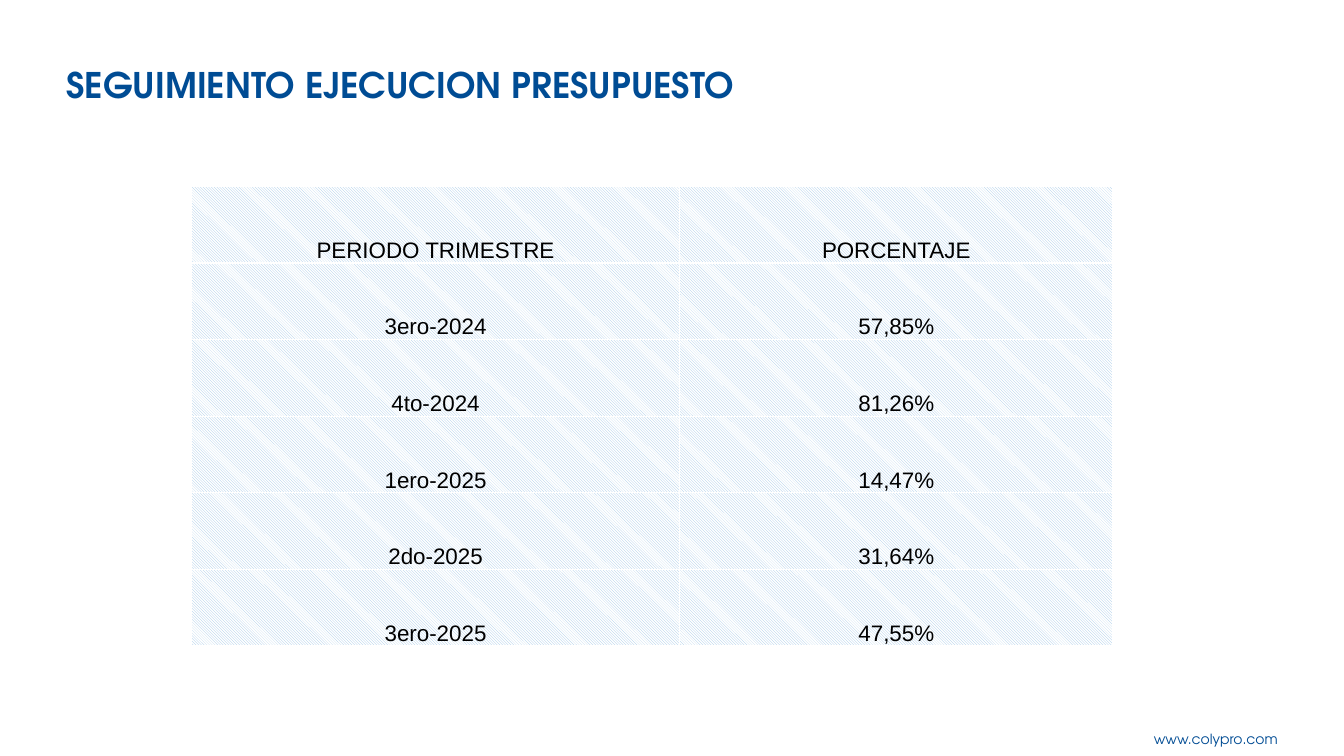
from dataclasses import dataclass

import pptx
import pptx.dml.color
import pptx.enum.dml
import pptx.enum.text
import pptx.oxml
import pptx.oxml.ns
import pptx.util

Inches = pptx.util.Inches
Pt = pptx.util.Pt
ALIGN = pptx.enum.text.PP_ALIGN
ANCHOR = pptx.enum.text.MSO_ANCHOR

BLUE = "004C94"
BLACK = "000000"
WHITE = "FFFFFF"
STRIPE = "9DC3E6"
BRAND_FONT = "TeX Gyre Adventor"
COL_WIDTHS = (4.84, 4.3)
ROW_HEIGHT = 0.76


@dataclass
class Row:
    period: str
    share: str


ROWS = [
    Row("PERIODO TRIMESTRE", "PORCENTAJE"),
    Row("3ero-2024", "57,85%"),
    Row("4to-2024", "81,26%"),
    Row("1ero-2025", "14,47%"),
    Row("2do-2025", "31,64%"),
    Row("3ero-2025", "47,55%"),
]

TITLE_FONT = {"name": BRAND_FONT, "size": Pt(25.2), "bold": True}
FOOTER_FONT = {"name": BRAND_FONT, "size": Pt(10)}
CELL_FONT = {"name": "Arial", "size": Pt(16), "bold": False}
CELL_FORMAT = {
    "margin_left": 0,
    "margin_right": 0,
    "margin_top": 0,
    "margin_bottom": 0,
    "vertical_anchor": ANCHOR.BOTTOM,
}
FRAME_FORMAT = {
    "word_wrap": True,
    "auto_size": pptx.enum.text.MSO_AUTO_SIZE.NONE,
    "vertical_anchor": ANCHOR.MIDDLE,
}


def rgb(value: str) -> pptx.dml.color.RGBColor:
    return pptx.dml.color.RGBColor.from_string(value)


def apply(target: object, values: dict) -> None:
    for name, value in values.items():
        setattr(target, name, value)


def write(tf, text: str, align: ALIGN, font: dict, color: str) -> None:
    p = tf.paragraphs[0]
    p.alignment = align
    r = p.add_run()
    r.text = text
    apply(r.font, font)
    r.font.color.rgb = rgb(color)


def add_borders(cell) -> None:
    tc_pr = cell._tc.get_or_add_tcPr()
    for side in ("lnL", "lnR", "lnT", "lnB"):
        tc_pr.append(pptx.oxml.parse_xml(
            f'<a:{side} {pptx.oxml.ns.nsdecls("a")} w="12700"><a:solidFill>'
            f'<a:srgbClr val="{WHITE}"/></a:solidFill></a:{side}>'
        ))


def format_cell(cell, text: str) -> None:
    apply(cell, CELL_FORMAT)
    add_borders(cell)
    cell.fill.patterned()
    cell.fill.pattern = pptx.enum.dml.MSO_PATTERN.DARK_DOWNWARD_DIAGONAL
    cell.fill.fore_color.rgb = rgb(STRIPE)
    cell.fill.back_color.rgb = rgb(WHITE)
    write(cell.text_frame, text, ALIGN.CENTER, CELL_FONT, BLACK)


def add_title(slide) -> None:
    sp = slide.shapes.title
    apply(sp, {"left": Inches(0.56), "top": Inches(0.57),
               "width": Inches(8.79), "height": Inches(0.59)})
    apply(sp.text_frame, FRAME_FORMAT)
    write(sp.text_frame, "SEGUIMIENTO EJECUCION PRESUPUESTO",
          ALIGN.LEFT, TITLE_FONT, BLUE)
    sp.text_frame.paragraphs[0].line_spacing = 0.9


def add_footer(slide) -> None:
    sp = slide.shapes.add_textbox(
        Inches(10.49), Inches(7.2), Inches(2.28), Inches(0.27))
    apply(sp.text_frame, FRAME_FORMAT)
    write(sp.text_frame, "www.colypro.com", ALIGN.RIGHT, FOOTER_FONT, BLUE)


def add_budget_table(slide) -> None:
    table = slide.shapes.add_table(
        len(ROWS), len(COL_WIDTHS), Inches(1.9), Inches(1.85),
        Inches(sum(COL_WIDTHS)), Inches(ROW_HEIGHT * len(ROWS))).table
    apply(table, {"first_row": False, "horz_banding": False})
    for column, width in zip(table.columns, COL_WIDTHS):
        column.width = Inches(width)
    for table_row, row in zip(table.rows, ROWS):
        table_row.height = Inches(ROW_HEIGHT)
        for cell, text in zip(table_row.cells, (row.period, row.share)):
            format_cell(cell, text)


def main() -> None:
    prs = pptx.Presentation()
    prs.slide_width = Inches(13.33)
    prs.slide_height = Inches(7.5)
    slide = prs.slides.add_slide(prs.slide_layouts[5])
    add_footer(slide)
    add_title(slide)
    add_budget_table(slide)
    prs.save("out.pptx")


if __name__ == "__main__":
    main()
